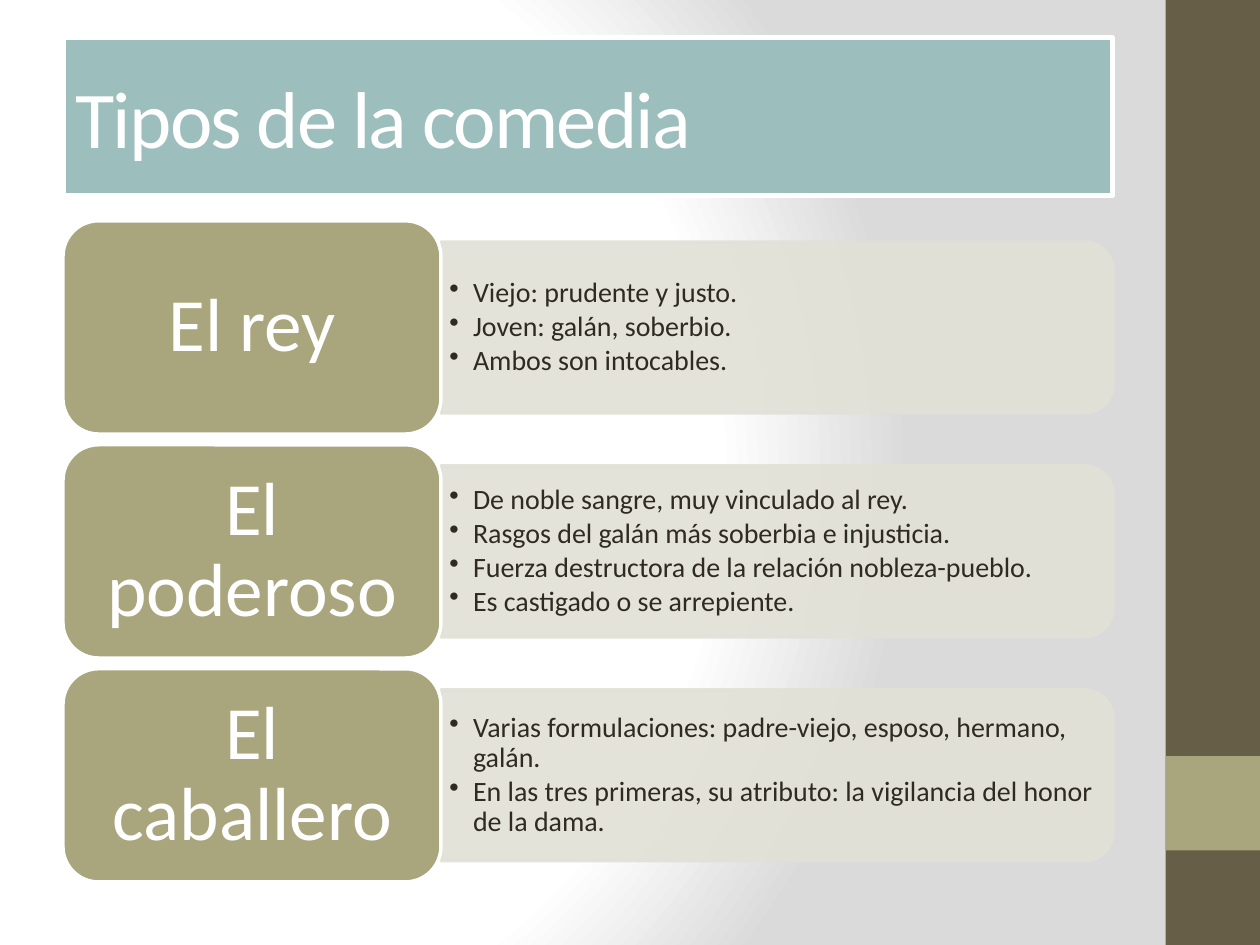
from pptx import Presentation
from pptx.dml.color import RGBColor
from pptx.enum.shapes import MSO_SHAPE
from pptx.enum.text import MSO_ANCHOR, PP_ALIGN
from pptx.oxml import parse_xml
from pptx.oxml.ns import nsdecls, qn
from pptx.util import Inches, Pt
from lxml import etree

RECT, ROUNDED, TOP_ROUNDED = (
    MSO_SHAPE.RECTANGLE, MSO_SHAPE.ROUNDED_RECTANGLE, MSO_SHAPE.ROUND_2_SAME_RECTANGLE)
LEFT, CENTER, MIDDLE = PP_ALIGN.LEFT, PP_ALIGN.CENTER, MSO_ANCHOR.MIDDLE

THEME = {
    "font": "Calibri", "white": "FFFFFF", "edge": "DADADA", "brown": "675E47",
    "olive": "A9A57C", "teal": "9CBEBD", "pale": "E2E1D7", "ink": "2F2B20",
    "title_size": 46, "tab_size": 43, "body_size": 16,
}

# Square grid: 40 columns by 30 rows
COLUMNS, ROWS = 40, 30
UNIT = Inches(10) / COLUMNS

deck = Presentation()
deck.slide_width, deck.slide_height = int(COLUMNS * UNIT), int(ROWS * UNIT)
page = deck.slides.add_slide(deck.slide_layouts[6])


def add_block(parent, kind, place, fill, line=None, line_width=2):
    """Add a filled shape; place is left, top, width, height in grid units."""
    block = parent.add_shape(kind, *(int(value * UNIT) for value in place))
    block.shadow.inherit = False
    block.fill.solid()
    block.fill.fore_color.rgb = RGBColor.from_string(fill)
    if line:
        block.line.color.rgb = RGBColor.from_string(line)
        block.line.width = Pt(line_width)
    else:
        block.line.fill.background()
    return block


def write(box, text, size, color, align=LEFT, margins=(0.4, 0.2),
          line_spacing=1.0, space_after=0, tracking=0, bullet_indent=0):
    """Write text into a box, one paragraph a line; margins are in grid units."""
    frame = box.text_frame
    frame.word_wrap = True
    frame.vertical_anchor = MIDDLE
    frame.margin_left = frame.margin_right = int(margins[0] * UNIT)
    frame.margin_top = frame.margin_bottom = int(margins[1] * UNIT)
    for index, line in enumerate(text.split("\n")):
        para = frame.paragraphs[0] if index == 0 else frame.add_paragraph()
        para.alignment = align
        para.line_spacing = line_spacing
        para.space_after = Pt(space_after)
        span = para.add_run()
        span.text = line
        span.font.name = THEME["font"]
        span.font.size = Pt(size)
        span.font.color.rgb = RGBColor.from_string(color)
        if tracking:
            span.font._element.set("spc", str(tracking * 100))
        if bullet_indent:
            properties = para._p.get_or_add_pPr()
            indent = int(bullet_indent * UNIT)
            properties.set("marL", str(indent))
            properties.set("indent", str(-indent))
            etree.SubElement(properties, qn("a:buChar")).set("char", "•")


# Background: circular gradient
page.background.fill.solid()
background = page.element.find(".//" + qn("p:bgPr"))
stops = "".join(
    f'<a:gs pos="{share * 1000}"><a:srgbClr val="{THEME[name]}"/></a:gs>'
    for share, name in ((0, "white"), (75, "white"), (100, "edge")))
background.replace(background[0], parse_xml(
    f'<a:gradFill {nsdecls("a")} rotWithShape="1"><a:gsLst>{stops}</a:gsLst>'
    '<a:path path="circle"><a:fillToRect l="20000" t="50000" r="100000" b="50000"/>'
    '</a:path></a:gradFill>'))

# Side band
add_block(page.shapes, RECT, (37, 0, 3, ROWS), THEME["brown"])
add_block(page.shapes, RECT, (37, 24, 3, 3), THEME["olive"])

# Title
title = add_block(page.shapes, RECT, (2, 1.2, 33.32, 5), THEME["teal"], THEME["white"], 3)
write(title, "Tipos de la comedia", THEME["title_size"], THEME["white"], tracking=-1)

# Character types: a tab with its bulleted bar in each row
TYPES = (
    ("El rey", "Viejo: prudente y justo.\nJoven: galán, soberbio.\nAmbos son intocables."),
    ("El poderoso", "De noble sangre, muy vinculado al rey.\n"
     "Rasgos del galán más soberbia e injusticia.\n"
     "Fuerza destructora de la relación nobleza-pueblo.\n"
     "Es castigado o se arrepiente."),
    ("El caballero", "Varias formulaciones: padre-viejo, esposo, hermano, galán.\n"
     "En las tres primeras, su atributo: la vigilancia del honor de la dama."),
)
FIRST_TOP, PITCH = 7.01, 7.11
TAB_LEFT, TAB_WIDTH, TAB_HEIGHT, TAB_INSET = 2, 12, 6.77, 0.33
BAR_LEFT, BAR_LENGTH, BAR_HEIGHT = TAB_LEFT + TAB_WIDTH, 21.33, 5.42
BODY_WIDTH, BODY_HEIGHT = 21.07, 4.89

diagram = page.shapes.add_group_shape().shapes
for row, (name, traits) in enumerate(TYPES):
    top = FIRST_TOP + row * PITCH
    middle = top + TAB_HEIGHT / 2

    # The bar stands upright before its quarter turn
    bar = add_block(diagram, TOP_ROUNDED,
                    (BAR_LEFT + (BAR_LENGTH - BAR_HEIGHT) / 2, middle - BAR_LENGTH / 2,
                     BAR_HEIGHT, BAR_LENGTH), THEME["pale"], THEME["pale"])
    bar.rotation = 90
    for color in bar.element.spPr.iter(qn("a:srgbClr")):
        etree.SubElement(color, qn("a:alpha")).set("val", "90000")

    body = diagram.add_textbox(*(int(value * UNIT) for value in (
        BAR_LEFT, middle - BODY_HEIGHT / 2, BODY_WIDTH, BODY_HEIGHT)))
    write(body, traits, THEME["body_size"], THEME["ink"], margins=(0.27, 0.13),
          line_spacing=0.9, space_after=2, bullet_indent=0.75)

    add_block(diagram, ROUNDED, (TAB_LEFT, top, TAB_WIDTH, TAB_HEIGHT),
              THEME["olive"], THEME["white"])
    label = diagram.add_textbox(*(int(value * UNIT) for value in (
        TAB_LEFT + TAB_INSET, top + TAB_INSET,
        TAB_WIDTH - 2 * TAB_INSET, TAB_HEIGHT - 2 * TAB_INSET)))
    write(label, name, THEME["tab_size"], THEME["white"], align=CENTER,
          margins=(0.72, 0.36), line_spacing=0.9)

deck.save("out.pptx")
